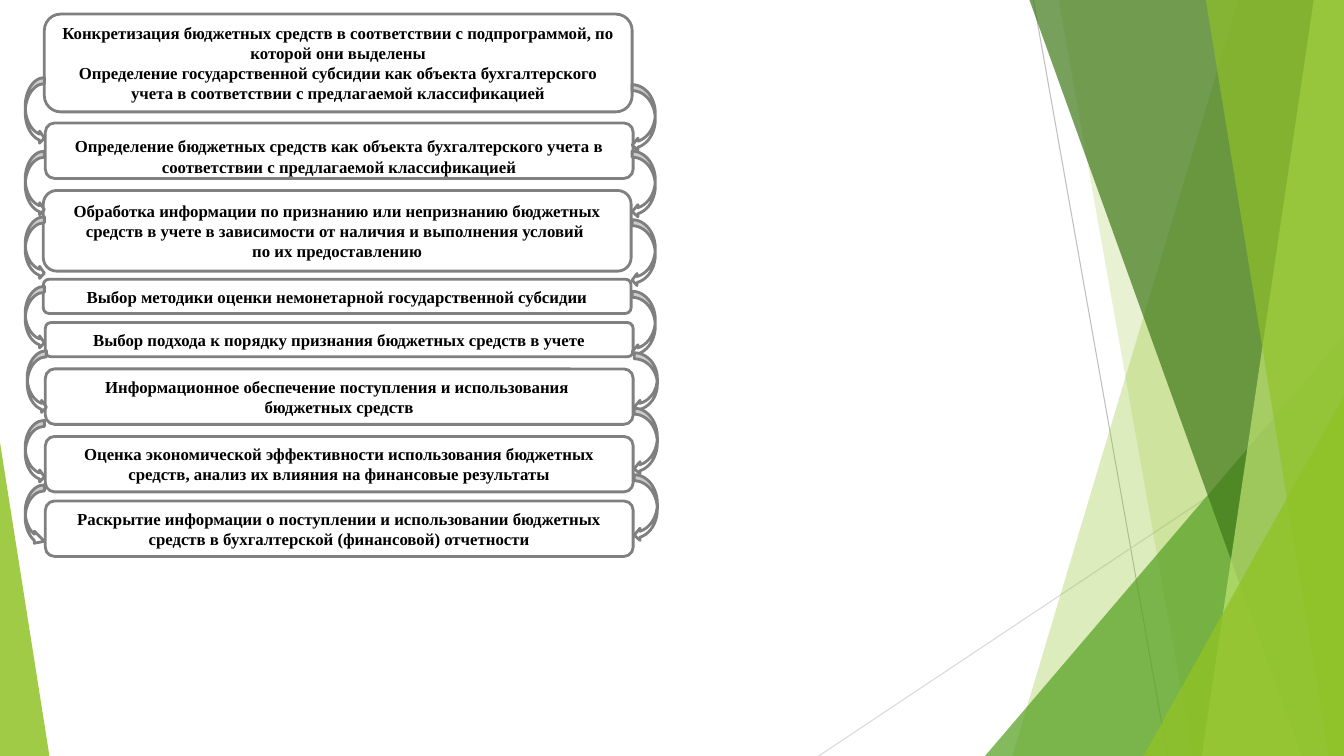
from lxml.etree import SubElement
from pptx import Presentation
from pptx.dml.color import RGBColor
from pptx.enum.shapes import MSO_CONNECTOR, MSO_SHAPE as Shape
from pptx.enum.text import MSO_ANCHOR, PP_ALIGN
from pptx.oxml.ns import qn
from pptx.util import Pt

PX = 9144  # 100 px to the inch
WIDTH, HEIGHT = 1333, 750

# from, to, colour
HAIRLINES = [
    ((1025, 0), (1158, 750), "BFBFBF"),
    ((1333, 403), (812, 750), "D9D9D9"),
]

# Back to front. A band gives its top-left and bottom-left x and runs to the
# right edge; a triangle gives its left, top, width and apex position.
FACETS = [
    ("band", (1228, 1004), "90C226", 30),
    ("band", (1050, 1183), "90C226", 20),
    ("triangle", (977, 333, 356, 1), "54A021", 72),
    ("band", (1021, 1291), "3F7819", 70),
    ("band", (1303, 1192), "C0E474", 70),
    ("band", (1196, 1318), "90C226", 65),
    ("triangle", (1134, 393, 199, 1), "90C226", 80),
    ("triangle", (0, 439, 49, 0), "90C226", 85),
]

STEP_WIDTH = 583
# left, top, height, top inset, bottom inset, paragraphs
STEPS = [
    (44, 14, 97, 5, 5, [
        "Конкретизация бюджетных средств в соответствии с подпрограммой, по которой они выделены",
        "Определение государственной субсидии как объекта бухгалтерского учета в соответствии с предлагаемой классификацией"]),
    (45, 122, 55, 12, 1, [
        "Определение бюджетных средств как объекта бухгалтерского учета в соответствии с предлагаемой классификацией"]),
    (43, 189, 80, 5, 5, [
        "Обработка информации по признанию или непризнанию бюджетных средств в учете в зависимости от наличия и выполнения условий ",
        "по их предоставлению"]),
    (43, 277, 34, 5, 5, [
        "Выбор методики оценки немонетарной государственной субсидии"]),
    (45, 320, 34, 5, 5, [
        "Выбор подхода к порядку признания бюджетных средств в учете"]),
    (45, 366, 55, 5, 5, [
        "Информационное обеспечение поступления и использования ",
        "бюджетных средств"]),
    (45, 433, 55, 5, 5, [
        "Оценка экономической эффективности использования бюджетных средств, анализ их влияния на финансовые результаты"]),
    (45, 497, 55, 5, 5, [
        "Раскрытие информации о поступлении и использовании бюджетных средств в бухгалтерской (финансовой) отчетности"]),
]

# left, top, height, head length as a share of the width
LEFT_ARROWS = [
    (25, 77, 66, 0.25), (25, 150, 64, 0.25), (25, 215, 62, 0.25),
    (25, 284, 62, 0.25), (27, 348, 62, 0.25), (25, 417, 62, 0.25),
    (25, 481, 62, 0.53),
]
RIGHT_ARROWS = [
    (627, 84, 66, 0.25), (627, 150, 66, 0.25), (627, 218, 66, 0.21),
    (627, 289, 66, 0.25), (629, 350, 60, 0.25), (629, 405, 66, 0.25),
    (629, 471, 66, 0.25),
]
# preset, width, band and head thickness as shares of the width, arrows
ARROW_COLUMNS = [
    (Shape.CURVED_RIGHT_ARROW, 19, 0.315, 0.63, LEFT_ARROWS),
    (Shape.CURVED_LEFT_ARROW, 23, 0.26, 0.52, RIGHT_ARROWS),
]


def color(hex_string):
    return RGBColor.from_string(hex_string)


def add_preset(preset, left, top, width, height, fill, outline=None):
    shape = slide.shapes.add_shape(
        preset, left * PX, top * PX, width * PX, height * PX)
    paint(shape, fill, outline)
    return shape


def paint(shape, fill, outline=None):
    shape.shadow.inherit = False
    shape.fill.solid()
    shape.fill.fore_color.rgb = color(fill)
    if outline:
        shape.line.color.rgb = color(outline)
        shape.line.width = Pt(2)
    else:
        shape.line.fill.background()


def set_opacity(shape, percent):
    fill_color = shape.fill._xPr.find(qn("a:solidFill"))[0]
    SubElement(fill_color, qn("a:alpha")).set("val", str(percent * 1000))


def add_hairline(start, end, line_color):
    line = slide.shapes.add_connector(
        MSO_CONNECTOR.STRAIGHT, *(value * PX for value in start + end))
    line.line.color.rgb = color(line_color)
    line.line.width = Pt(0.75)
    SubElement(line._element.spPr, qn("a:effectLst"))


def add_facet(kind, geometry, fill, opacity):
    if kind == "triangle":
        left, top, width, apex = geometry
        facet = add_preset(Shape.ISOSCELES_TRIANGLE, left, top, width, HEIGHT - top, fill)
        facet.adjustments[0] = apex
    else:
        top_x, bottom_x = geometry
        outline = slide.shapes.build_freeform(top_x, 0, scale=PX)
        outline.add_line_segments([(WIDTH, 0), (WIDTH, HEIGHT), (bottom_x, HEIGHT)])
        facet = outline.convert_to_shape()
        paint(facet, fill)
    set_opacity(facet, opacity)


def add_step(left, top, height, inset_top, inset_bottom, paragraphs):
    box = add_preset(Shape.ROUNDED_RECTANGLE, left, top, STEP_WIDTH, height,
                     "FFFFFF", "808080")
    frame = box.text_frame
    frame.word_wrap = True
    frame.vertical_anchor = MSO_ANCHOR.MIDDLE
    frame.margin_top, frame.margin_bottom = inset_top * PX, inset_bottom * PX
    frame.text = "\n".join(paragraphs)
    for para in frame.paragraphs:
        para.alignment = PP_ALIGN.CENTER
        para.font.name = "Times New Roman"
        para.font.size = Pt(12)
        para.font.bold = True
        para.font.color.rgb = color("000000")


deck = Presentation()
deck.slide_width, deck.slide_height = WIDTH * PX, HEIGHT * PX
slide = deck.slides.add_slide(deck.slide_layouts[6])

for hairline in HAIRLINES:
    add_hairline(*hairline)
for facet_data in FACETS:
    add_facet(*facet_data)
for step in STEPS:
    add_step(*step)
for preset, width, band, head, arrows in ARROW_COLUMNS:
    for left, top, height, head_length in arrows:
        arrow = add_preset(preset, left, top, width, height, "FFFFFF", "7F7F7F")
        for index, share in enumerate((band, head, head_length)):
            arrow.adjustments[index] = share

deck.save("out.pptx")
